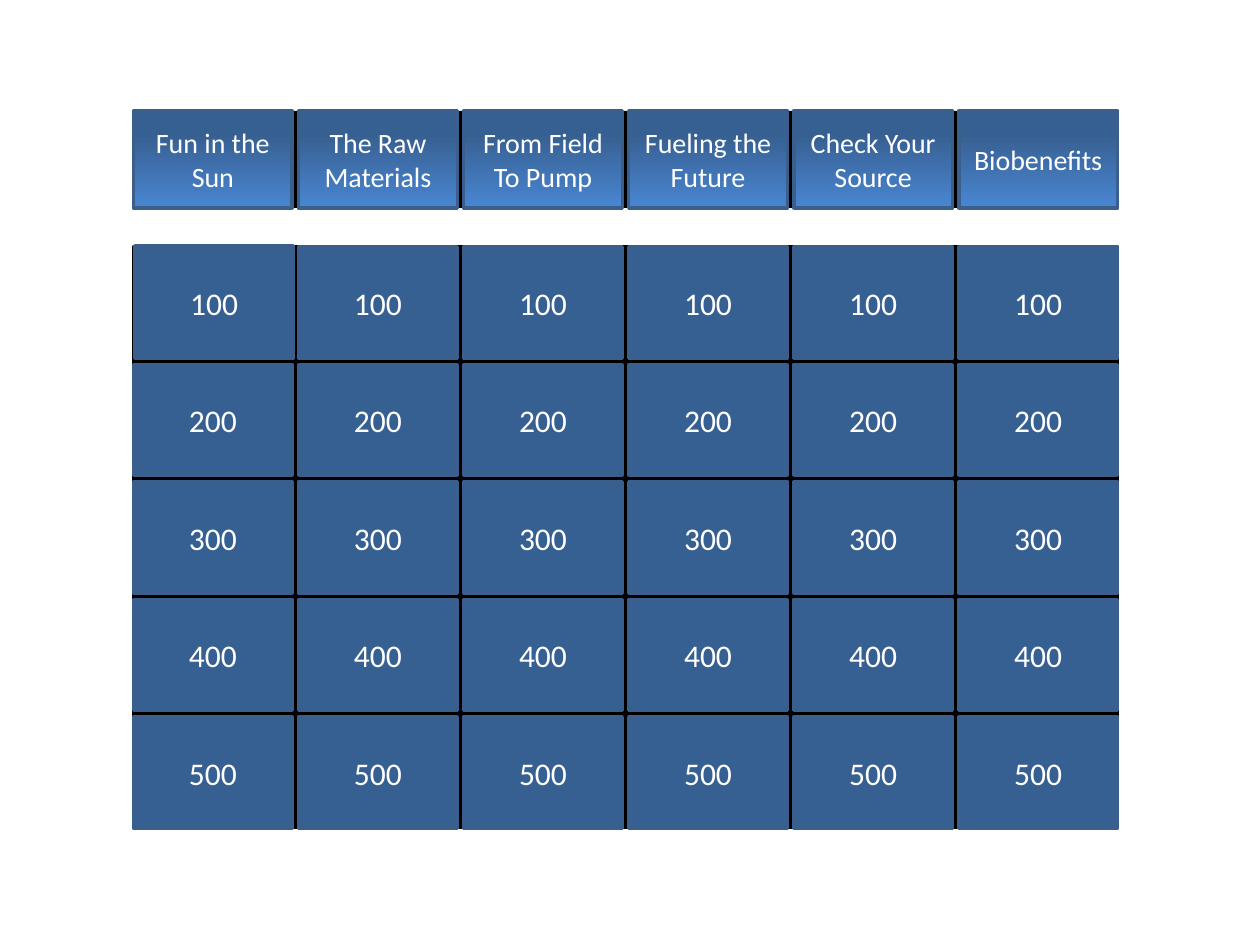
import dataclasses

import pptx
import pptx.dml.color
import pptx.enum.shapes
import pptx.enum.text
import pptx.util

Inches = pptx.util.Inches
Pt = pptx.util.Pt


@dataclasses.dataclass(frozen=True)
class Theme:
    font: str = "Calibri"
    category_size: int = 16
    points_size: int = 18
    outline_width: int = 2
    text: str = "FFFFFF"
    backing: str = "000000"
    tile: str = "376092"
    tile_light: str = "4986D2"
    outline: str = "3A5F8C"


THEME = Theme()

CATEGORIES = ["Fun in the Sun", "The Raw Materials", "From Field To Pump",
              "Fueling the Future", "Check Your Source", "Biobenefits"]
POINTS = [100, 200, 300, 400, 500]

# Board geometry, in inches
LEFT, BOARD_WIDTH = 1.06, 7.81
TILE_WIDTH, COLUMN_STEP = 1.26, 1.31
HEADER_TOP, HEADER_HEIGHT = 0.88, 0.77
GRID_TOP, GRID_HEIGHT = 1.96, 4.61
TILE_HEIGHT = 0.88
ROW_STEP = (GRID_HEIGHT - TILE_HEIGHT) / (len(POINTS) - 1)


def color(value):
    return pptx.dml.color.RGBColor.from_string(value)


def add_box(page, left, top, width, height, fill, outline=None):
    box = page.shapes.add_shape(
        pptx.enum.shapes.MSO_SHAPE.RECTANGLE,
        Inches(left), Inches(top), Inches(width), Inches(height))
    box.shadow.inherit = False
    box.fill.solid()
    box.fill.fore_color.rgb = color(fill)
    if outline:
        box.line.color.rgb = color(outline)
        box.line.width = Pt(THEME.outline_width)
    else:
        box.line.fill.background()
    return box


def add_gradient(box, top_color, bottom_color):
    """Keep the top quarter plain, then fade downwards."""
    box.fill.gradient()
    box.fill.gradient_angle = 270
    stops = zip(box.fill.gradient_stops,
                [(0.25, top_color), (1, bottom_color)])
    for stop, (position, value) in stops:
        stop.position = position
        stop.color.rgb = color(value)


def write_text(box, text, *, size, value=THEME.text, font=THEME.font):
    frame = box.text_frame
    frame.word_wrap = True
    frame.vertical_anchor = pptx.enum.text.MSO_ANCHOR.MIDDLE
    para = frame.paragraphs[0]
    para.alignment = pptx.enum.text.PP_ALIGN.CENTER
    span = para.add_run()
    span.text = text
    span.font.name = font
    span.font.size = Pt(size)
    span.font.color.rgb = color(value)


def add_category(page, left, text):
    box = add_box(page, left, HEADER_TOP, TILE_WIDTH, HEADER_HEIGHT,
                  THEME.tile, THEME.outline)
    add_gradient(box, THEME.tile, THEME.tile_light)
    write_text(box, text, size=THEME.category_size)


def add_tile(page, left, top, text=None):
    box = add_box(page, left, top, TILE_WIDTH, TILE_HEIGHT,
                  THEME.tile, THEME.outline)
    if text:
        write_text(box, text, size=THEME.points_size)


def main():
    deck = pptx.Presentation()
    deck.slide_width, deck.slide_height = Inches(10), Inches(7.5)
    page = deck.slides.add_slide(deck.slide_layouts[6])

    # Black backing that shows through the gaps
    add_box(page, LEFT, HEADER_TOP, BOARD_WIDTH, HEADER_HEIGHT, THEME.backing)
    add_box(page, LEFT, GRID_TOP, BOARD_WIDTH, GRID_HEIGHT,
            THEME.backing, THEME.backing)

    # Plain tile behind the first question, whose tile sits slightly right
    first_left = LEFT + 0.01
    add_tile(page, first_left, GRID_TOP - 0.01)

    # Category headers and point tiles, column by column
    for column, category in enumerate(CATEGORIES):
        left = LEFT + column * COLUMN_STEP
        add_category(page, left, category)
        for row, points in enumerate(POINTS):
            tile_left = first_left if column == row == 0 else left
            add_tile(page, tile_left, GRID_TOP + row * ROW_STEP, str(points))

    deck.save("out.pptx")


if __name__ == "__main__":
    main()
